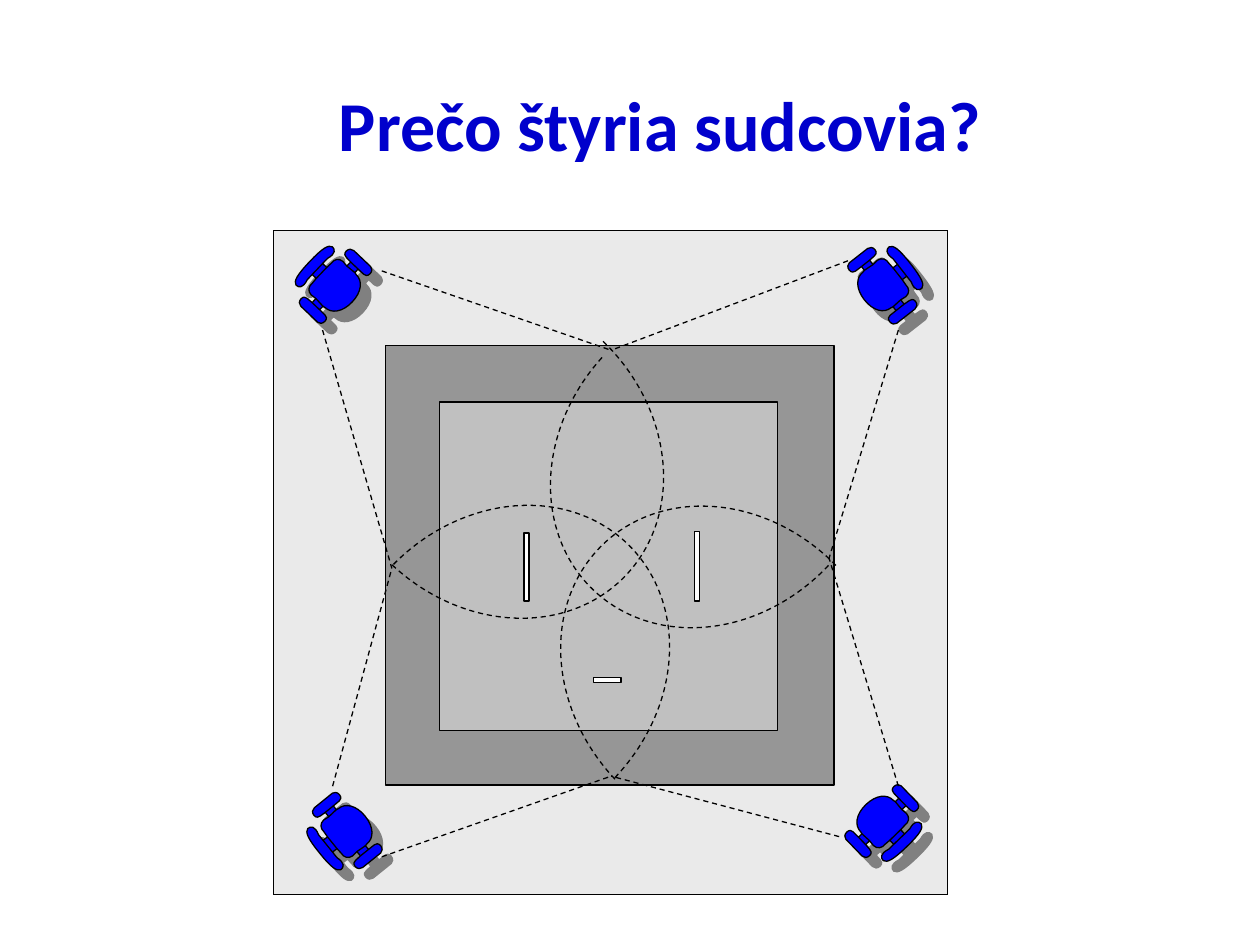
from lxml.etree import SubElement
from pptx import Presentation
from pptx.dml.color import RGBColor
from pptx.enum.dml import MSO_LINE
from pptx.enum.shapes import MSO_CONNECTOR, MSO_SHAPE
from pptx.enum.text import MSO_ANCHOR
from pptx.oxml.ns import qn
from pptx.util import Inches, Pt

THEME = {
    "font": "Calibri", "title_size": 40, "title": "0000CC", "line": "000000",
    "hall": "EAEAEA", "safety": "969696", "mat": "C0C0C0", "marks": "FFFFFF",
    "chair": "0000FF", "shadow": "808080", "thin": 0.25, "normal": 0.75,
}

TITLE = "Prečo štyria sudcovia?"

# left, top, width, height, fill, line width
FLOOR = [
    (2.17, 1.83, 5.35, 5.27, "hall", "normal"),
    (2.17, 1.83, 5.35, 5.27, None, "thin"),
    (3.06, 2.74, 3.56, 3.49, "safety", "normal"),
    (3.49, 3.19, 2.68, 2.61, "mat", "normal"),
    (4.16, 4.23, 0.04, 0.54, "marks", "normal"),
    (5.51, 4.22, 0.04, 0.55, "marks", "normal"),
    (4.71, 5.38, 0.22, 0.04, "marks", "normal"),
]

# left, top, rotation
CHAIRS = [(2.32, 2, 313.5), (6.73, 6.32, 136), (2.41, 6.39, 231.1), (6.74, 2, 51.9)]
CHAIR_SIZE = (610, 470)  # thousandths of an inch

# Left half of a chair seen from above, from mid-back to mid-front, measured
# from its centre: two numbers make a line, six make a curve.
HALF_START = (0, -230)
HALF_CHAIR = [
    (-150, -230, -200, -215, -210, -180),
    (-210, -150, -190, -122, -117, -145),
    (-60, -145), (-60, -100), (-110, -97),
    (-146, -103, -181, -82, -183, -40),
    (-178, 8), (-222, 8), (-225, -41),
    (-225, -55, -231, -77, -260, -77),
    (-288, -77, -305, -58, -305, -36),
    (-305, 148),
    (-305, 165, -288, 184, -260, 184),
    (-231, 184, -223, 164, -223, 150),
    (-222, 90), (-184, 90), (-180, 108),
    (-181, 179, -112, 235, 0, 235),
]
SEAMS = [
    ((-60, -145), (60, -145)), ((-60, -100), (60, -100)),
    ((-178, 8), (-184, 90)), ((-222, 8), (-222, 90)),
    ((178, 8), (184, 90)), ((222, 8), (222, 90)),
]

# meeting point: the judges' positions that look at it
SIGHT_LINES = {
    (3.11, 4.51): [(2.56, 2.62), (2.64, 6.24)],
    (4.85, 2.78): [(3.03, 2.15), (6.73, 2.07)],
    (4.85, 6.16): [(3.03, 6.8), (6.66, 6.64)],
    (6.58, 4.43): [(7.13, 6.24), (7.13, 2.62)],
}

# left, top, rotation
VIEW_ARCS = [(3.78, 3.61, 134.6), (4.49, 2.95, 313.2), (4.57, 3.61, 46.6), (3.74, 2.86, 224)]
ARC_SIZE = (1.42, 2.44)
ARC_BEND = 0.86


def color(key):
    return RGBColor.from_string(THEME[key])


def set_line(item, width="normal", dashed=False):
    item.line.color.rgb = color("line")
    item.line.width = Pt(THEME[width])
    if dashed:
        item.line.dash_style = MSO_LINE.DASH


def style(shape, fill=None, width="normal", dashed=False):
    shape.shadow.inherit = False
    if fill:
        shape.fill.solid()
        shape.fill.fore_color.rgb = color(fill)
    else:
        shape.fill.background()
    set_line(shape, width, dashed)


def add_text(slide, text, box, *, size, ink, bold=False, indent=0.1, bottom=0.05):
    frame = slide.shapes.add_textbox(*map(Inches, box)).text_frame
    frame.word_wrap = True
    frame.vertical_anchor = MSO_ANCHOR.BOTTOM
    frame.margin_left, frame.margin_bottom = Inches(indent), Inches(bottom)
    paragraph = frame.paragraphs[0]
    paragraph.text = text
    font = paragraph.font
    font.name, font.size, font.bold = THEME["font"], Pt(size), bold
    font.color.rgb = color(ink)


def pairs(numbers):
    return list(zip(numbers[::2], numbers[1::2]))


def chair_outline():
    """Join the left half with its mirror image, walked backwards."""
    left = [pairs(segment) for segment in HALF_CHAIR]
    starts = [HALF_START] + [segment[-1] for segment in left[:-1]]
    right = [
        [(-x, y) for x, y in segment[-2::-1] + [start]]
        for start, segment in zip(reversed(starts), reversed(left))
    ]
    return left + right


def add_step(path, tag, points=()):
    step = SubElement(path, qn(f"a:{tag}"))
    for x, y in points:
        SubElement(step, qn("a:pt"), x=str(x + CHAIR_SIZE[0] // 2),
                   y=str(y + CHAIR_SIZE[1] // 2))


def add_chair(slide, left, top, rotation):
    width, height = CHAIR_SIZE
    builder = slide.shapes.build_freeform(0, 0, scale=Inches(1) / 1000)
    builder.add_line_segments([(width, 0), (width, height), (0, height)])
    chair = builder.convert_to_shape(Inches(left), Inches(top))
    path = next(chair._element.iter(qn("a:path")))
    for corner in list(path):
        path.remove(corner)
    add_step(path, "moveTo", [HALF_START])
    for segment in chair_outline():
        add_step(path, "cubicBezTo" if len(segment) == 3 else "lnTo", segment)
    add_step(path, "close")
    for start, end in SEAMS:
        add_step(path, "moveTo", [start])
        add_step(path, "lnTo", [end])
    chair.rotation = rotation
    style(chair, "chair")
    effects = chair._element.spPr.find(qn("a:effectLst"))
    shadow = SubElement(effects, qn("a:outerShdw"), blurRad="0", dist=str(Pt(8.5)),
                        dir="2700000", algn="ctr", rotWithShape="0")
    SubElement(shadow, qn("a:srgbClr"), val=THEME["shadow"])


def add_sight_line(slide, start, end):
    sight = slide.shapes.add_connector(MSO_CONNECTOR.STRAIGHT, *map(Inches, start + end))
    set_line(sight, dashed=True)
    SubElement(sight._element.spPr, qn("a:effectLst"))


def main():
    prs = Presentation()
    prs.slide_width, prs.slide_height = Inches(10), Inches(7.5)
    slide = prs.slides.add_slide(prs.slide_layouts[6])
    add_text(slide, TITLE, (0.75, 0.83, 8.83, 0.5), size=THEME["title_size"],
             ink="title", bold=True, indent=1.94, bottom=0.02)
    for *box, fill, width in FLOOR:
        area = slide.shapes.add_shape(MSO_SHAPE.RECTANGLE, *map(Inches, box))
        style(area, fill, width)
    for position in CHAIRS:
        add_chair(slide, *position)
    for target, judges in SIGHT_LINES.items():
        for judge in judges:
            add_sight_line(slide, judge, target)
    for left, top, rotation in VIEW_ARCS:
        arc = slide.shapes.add_shape(MSO_SHAPE.LEFT_BRACKET,
                                     *map(Inches, (left, top, *ARC_SIZE)))
        arc.adjustments[0] = ARC_BEND
        arc.rotation = rotation
        style(arc, dashed=True)
    prs.save("out.pptx")


if __name__ == "__main__":
    main()
